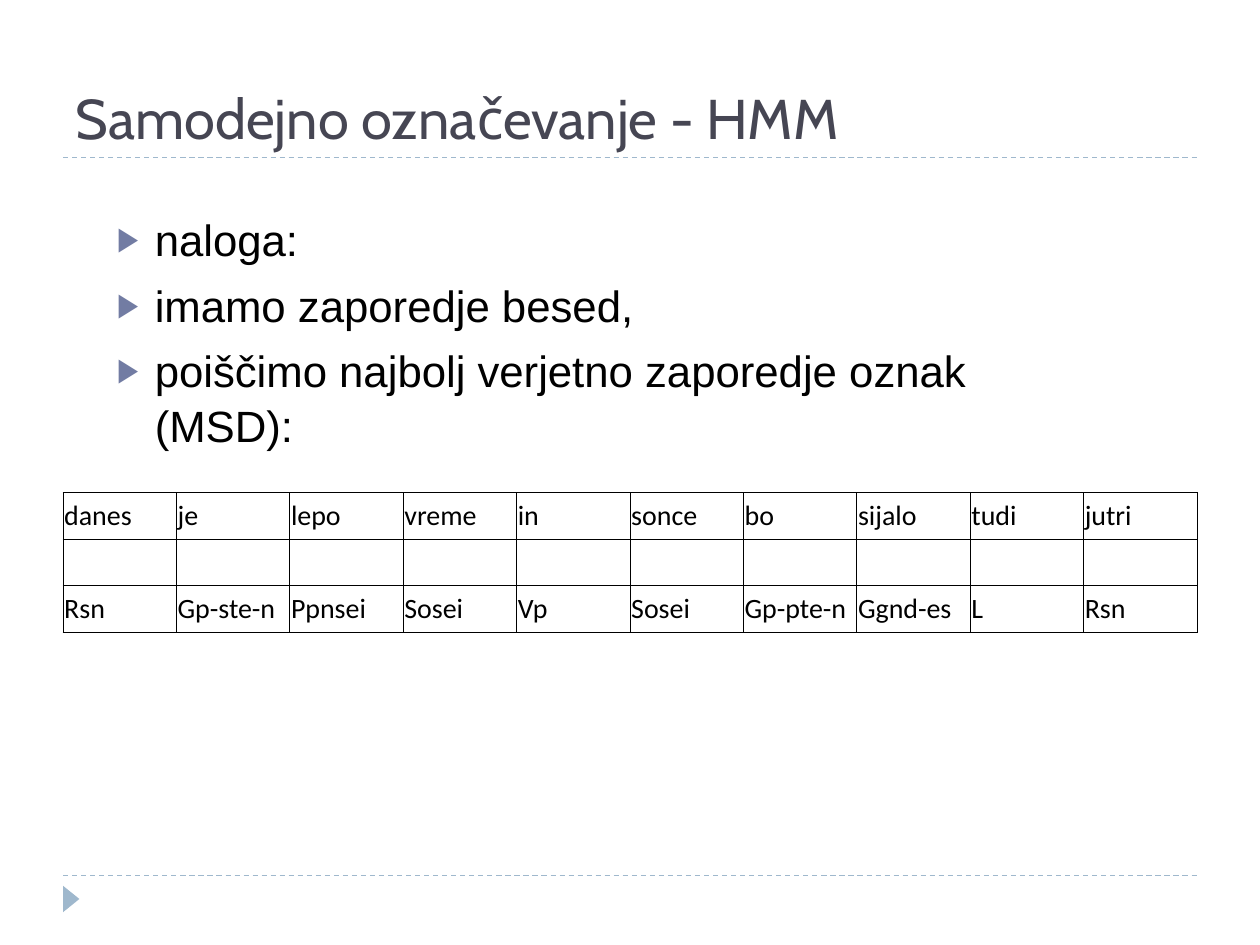
from lxml import etree
from pptx import Presentation
from pptx.dml.color import RGBColor
from pptx.enum.dml import MSO_LINE
from pptx.enum.shapes import MSO_CONNECTOR, MSO_SHAPE
from pptx.enum.text import MSO_ANCHOR, MSO_AUTO_SIZE
from pptx.oxml.ns import qn
from pptx.util import Inches, Pt

STRAIGHT = MSO_CONNECTOR.STRAIGHT
TRIANGLE = MSO_SHAPE.ISOSCELES_TRIANGLE
DASH = MSO_LINE.DASH
BOTTOM, MIDDLE = MSO_ANCHOR.BOTTOM, MSO_ANCHOR.MIDDLE
NO_AUTOFIT = MSO_AUTO_SIZE.NONE

WIDTH, HEIGHT = 10, 7.5
MARGIN = 0.05  # share of the slide's width
CONTENT = 1 - 2 * MARGIN
ROW_HEIGHT = 0.37 / HEIGHT

COLORS = {
    "title": "464653",
    "text": "000000",
    "bullet": "727CA3",
    "accent": "9FB8CD",
}
FONTS = {
    "title": {"name": "Cabin", "size": Pt(32), "bold": False},
    "body": {"name": "Arial", "size": Pt(25)},
    "table": {"name": "Calibri", "size": Pt(16), "bold": False},
}
BULLETS = [
    "naloga:",
    "imamo zaporedje besed,",
    "poiščimo najbolj verjetno zaporedje oznak (MSD):",
]
WORDS = ["danes", "je", "lepo", "vreme", "in", "sonce", "bo", "sijalo", "tudi", "jutri"]
TAGS = ["Rsn", "Gp-ste-n", "Ppnsei", "Sosei", "Vp", "Sosei", "Gp-pte-n", "Ggnd-es", "L", "Rsn"]


def set_values(target, values):
    for name, value in values.items():
        setattr(target, name, value)


def add_element(parent, tag, **attributes):
    return etree.SubElement(parent, qn(tag), attributes)


class SlideBuilder:
    """Places styled elements; all lengths are shares of the slide's size."""

    def __init__(self, presentation):
        self.slide_width = presentation.slide_width
        self.slide_height = presentation.slide_height
        self.slide = presentation.slides.add_slide(presentation.slide_layouts[5])

    def box(self, left, top, width, height):
        return (
            round(left * self.slide_width), round(top * self.slide_height),
            round(width * self.slide_width), round(height * self.slide_height),
        )

    def style(self, font, kind, color):
        set_values(font, FONTS[kind])
        font.color.rgb = RGBColor.from_string(COLORS[color])

    def title(self, text, *area):
        title = self.slide.shapes.title
        names = ("left", "top", "width", "height")
        set_values(title, dict(zip(names, self.box(*area))))
        frame = title.text_frame
        set_values(frame, {"text": text, "vertical_anchor": BOTTOM,
                           "word_wrap": True, "auto_size": NO_AUTOFIT})
        paragraph = frame.paragraphs[0]
        paragraph.alignment = 1
        self.style(paragraph.runs[0].font, "title", "title")

    def rule(self, top):
        left, y, width, _ = self.box(MARGIN, top, CONTENT, 0)
        line = self.slide.shapes.add_connector(STRAIGHT, left, y, left + width, y)
        set_values(line.line, {"width": Pt(0.75), "dash_style": DASH})
        line.line.color.rgb = RGBColor.from_string(COLORS["accent"])
        add_element(line._element.spPr, "a:effectLst")

    def marker(self, *area):
        marker = self.slide.shapes.add_shape(TRIANGLE, *self.box(*area))
        marker.rotation = 90
        marker.shadow.inherit = False
        marker.fill.solid()
        marker.fill.fore_color.rgb = RGBColor.from_string(COLORS["accent"])
        marker.line.fill.background()

    def bullets(self, items, *area):
        frame = self.slide.shapes.add_textbox(*self.box(*area)).text_frame
        frame.word_wrap = True
        for index, item in enumerate(items):
            paragraph = frame.add_paragraph() if index else frame.paragraphs[0]
            set_values(paragraph, {"text": item, "space_before": Pt(6), "line_spacing": 1.05})
            self.style(paragraph.runs[0].font, "body", "text")
            properties = paragraph._p.get_or_add_pPr()
            indent = Inches(0.3)
            properties.set("marL", str(indent))
            properties.set("indent", str(-indent))
            bullet_color = add_element(properties, "a:buClr")
            add_element(bullet_color, "a:srgbClr", val=COLORS["bullet"])
            add_element(properties, "a:buSzPct", val="76000")
            add_element(properties, "a:buFont", typeface="Arial")
            add_element(properties, "a:buChar", char="▶")

    def cell_borders(self, cell):
        properties = cell._tc.get_or_add_tcPr()
        for position, side in enumerate(("a:lnL", "a:lnR", "a:lnT", "a:lnB")):
            line = etree.Element(qn(side), w=str(Pt(0.5)))
            fill = add_element(line, "a:solidFill")
            add_element(fill, "a:srgbClr", val=COLORS["text"])
            properties.insert(position, line)

    def table(self, rows, left, top, width, row_height):
        area = self.box(left, top, width, row_height * len(rows))
        table = self.slide.shapes.add_table(len(rows), len(rows[0]), *area).table
        set_values(table, {"first_row": False, "horz_banding": False})
        for row, texts in enumerate(rows):
            for column, text in enumerate(texts):
                cell = table.cell(row, column)
                set_values(cell, {
                    "text": text, "vertical_anchor": MIDDLE,
                    "margin_left": Inches(0.01), "margin_right": Inches(0.01),
                    "margin_top": 0, "margin_bottom": 0,
                })
                cell.fill.background()
                self.cell_borders(cell)
                for run in cell.text_frame.paragraphs[0].runs:
                    self.style(run.font, "table", "text")


def main():
    presentation = Presentation()
    presentation.slide_width = Inches(WIDTH)
    presentation.slide_height = Inches(HEIGHT)

    builder = SlideBuilder(presentation)
    for top in (6.95, 1.25):
        builder.rule(top / HEIGHT)
    builder.marker(0.046, 7.07 / HEIGHT, 0.021, 0.13 / HEIGHT)
    builder.title("Samodejno označevanje - HMM", MARGIN, 0.17 / HEIGHT, CONTENT, 1.08 / HEIGHT)
    builder.bullets(BULLETS, 0.083, 1.62 / HEIGHT, 0.795, 5.2 / HEIGHT)
    builder.table([WORDS, [""] * len(WORDS), TAGS], MARGIN, 3.91 / HEIGHT, CONTENT, ROW_HEIGHT)

    presentation.save("out.pptx")


if __name__ == "__main__":
    main()
